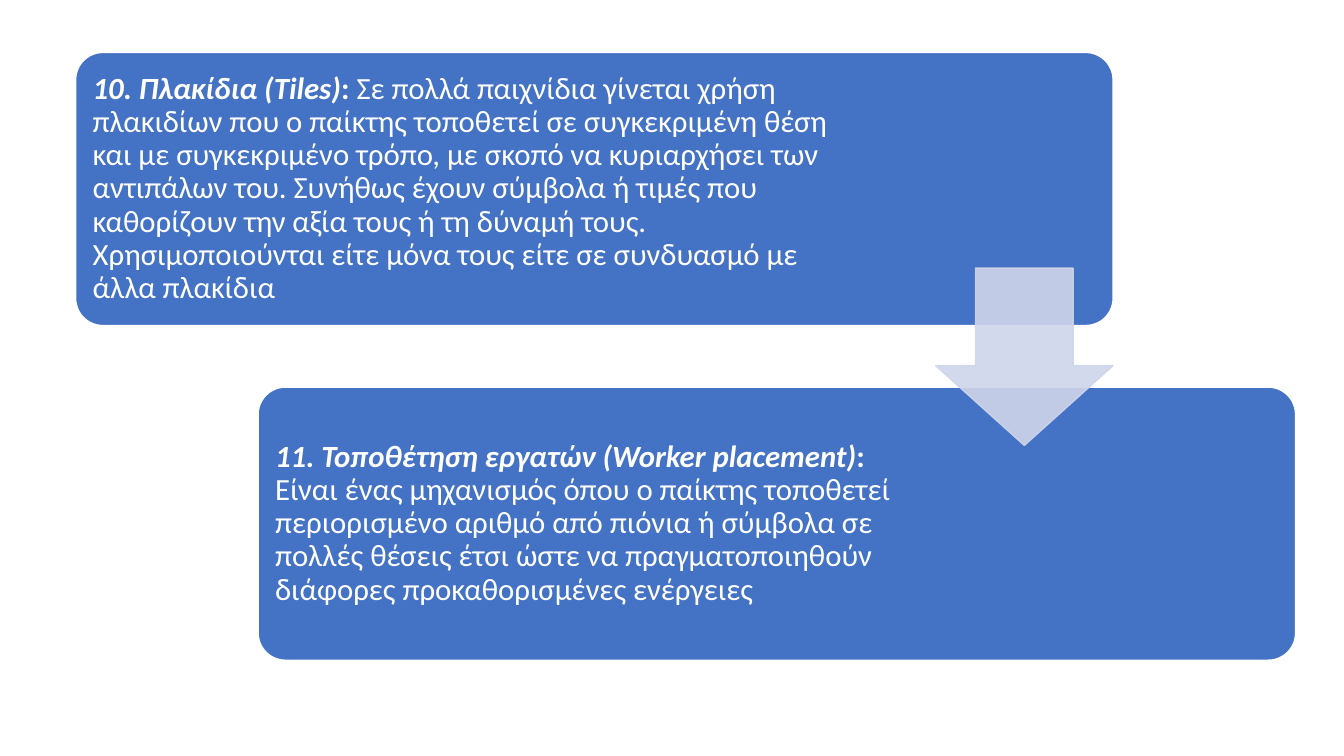
from lxml import etree
from pptx import Presentation
from pptx.dml.color import RGBColor
from pptx.enum.shapes import MSO_SHAPE
from pptx.enum.text import MSO_ANCHOR, PP_ALIGN
from pptx.oxml.ns import qn
from pptx.util import Inches, Pt

ROUNDED = MSO_SHAPE.ROUNDED_RECTANGLE
DOWN_ARROW = MSO_SHAPE.DOWN_ARROW
MIDDLE = MSO_ANCHOR.MIDDLE
LEFT = PP_ALIGN.LEFT
BLUE, PALE, WHITE = "4472C4", "CFD5EA", "FFFFFF"
BLANK_LAYOUT = 6

CARD_WIDTH, CARD_HEIGHT = 10.29, 2.71
FIRST_LEFT, FIRST_TOP = 0.75, 0.52
STEP_RIGHT, STEP_DOWN = 1.81, 3.32
ARROW_SIZE = 1.76
INSET = 0.09

# heading, description, right margin that keeps the text clear of the arrow
MECHANISMS = [
    ("10. Πλακίδια (Tiles)",
     "Σε πολλά παιχνίδια γίνεται χρήση πλακιδίων που ο παίκτης τοποθετεί σε "
     "συγκεκριμένη θέση και με συγκεκριμένο τρόπο, με σκοπό να κυριαρχήσει των "
     "αντιπάλων του. Συνήθως έχουν σύμβολα ή τιμές που καθορίζουν την αξία τους "
     "ή τη δύναμή τους. Χρησιμοποιούνται είτε μόνα τους είτε σε συνδυασμό με "
     "άλλα πλακίδια", 2.74),
    ("11. Τοποθέτηση εργατών (Worker placement)",
     "Είναι ένας μηχανισμός όπου ο παίκτης τοποθετεί περιορισμένο αριθμό από "
     "πιόνια ή σύμβολα σε πολλές θέσεις έτσι ώστε να πραγματοποιηθούν διάφορες "
     "προκαθορισμένες ενέργειες", 3.67),
]


def color(value):
    return RGBColor.from_string(value)


def add_block(page, kind, left, top, width, height, fill, line, adjustments):
    block = page.shapes.add_shape(
        kind, Inches(left), Inches(top), Inches(width), Inches(height))
    block.shadow.inherit = False
    block.fill.solid()
    block.fill.fore_color.rgb = color(fill)
    block.line.color.rgb = color(line)
    block.line.width = Pt(1)
    for index, value in enumerate(adjustments):
        block.adjustments[index] = value
    return block


def add_span(para, text, bold=False, italic=False):
    span = para.add_run()
    span.text = text
    span.font.name = "Calibri"
    span.font.size = Pt(22)
    span.font.bold = bold
    span.font.italic = italic
    span.font.color.rgb = color(WHITE)


def add_card(page, left, top, heading, description, right_margin):
    card = add_block(page, ROUNDED, left, top, CARD_WIDTH, CARD_HEIGHT,
                     BLUE, WHITE, [0.1])
    frame = card.text_frame
    frame.word_wrap = True
    frame.vertical_anchor = MIDDLE
    frame.margin_left = frame.margin_top = frame.margin_bottom = Inches(INSET)
    frame.margin_right = Inches(right_margin)
    para = frame.paragraphs[0]
    para.alignment = LEFT
    para.line_spacing = 0.9
    add_span(para, heading, bold=True, italic=True)
    add_span(para, ": ", bold=True)
    add_span(para, description)


def set_opacity(shape, percent):
    """Apply one opacity to both the fill and the line."""
    for tint in shape.fill._xPr.iter(qn("a:srgbClr")):
        etree.SubElement(tint, qn("a:alpha"), val=str(percent * 1000))


def add_arrow(page, left, top):
    arrow = add_block(page, DOWN_ARROW, left, top, ARROW_SIZE, ARROW_SIZE,
                      PALE, PALE, [0.55, 0.45])
    set_opacity(arrow, 90)


def main():
    deck = Presentation()
    deck.slide_width, deck.slide_height = Inches(13.33), Inches(7.5)
    page = deck.slides.add_slide(deck.slide_layouts[BLANK_LAYOUT])
    for index, mechanism in enumerate(MECHANISMS):
        add_card(page, FIRST_LEFT + index * STEP_RIGHT,
                 FIRST_TOP + index * STEP_DOWN, *mechanism)
    add_arrow(page, FIRST_LEFT + CARD_WIDTH - ARROW_SIZE, 2.66)
    deck.save("out.pptx")


if __name__ == "__main__":
    main()
